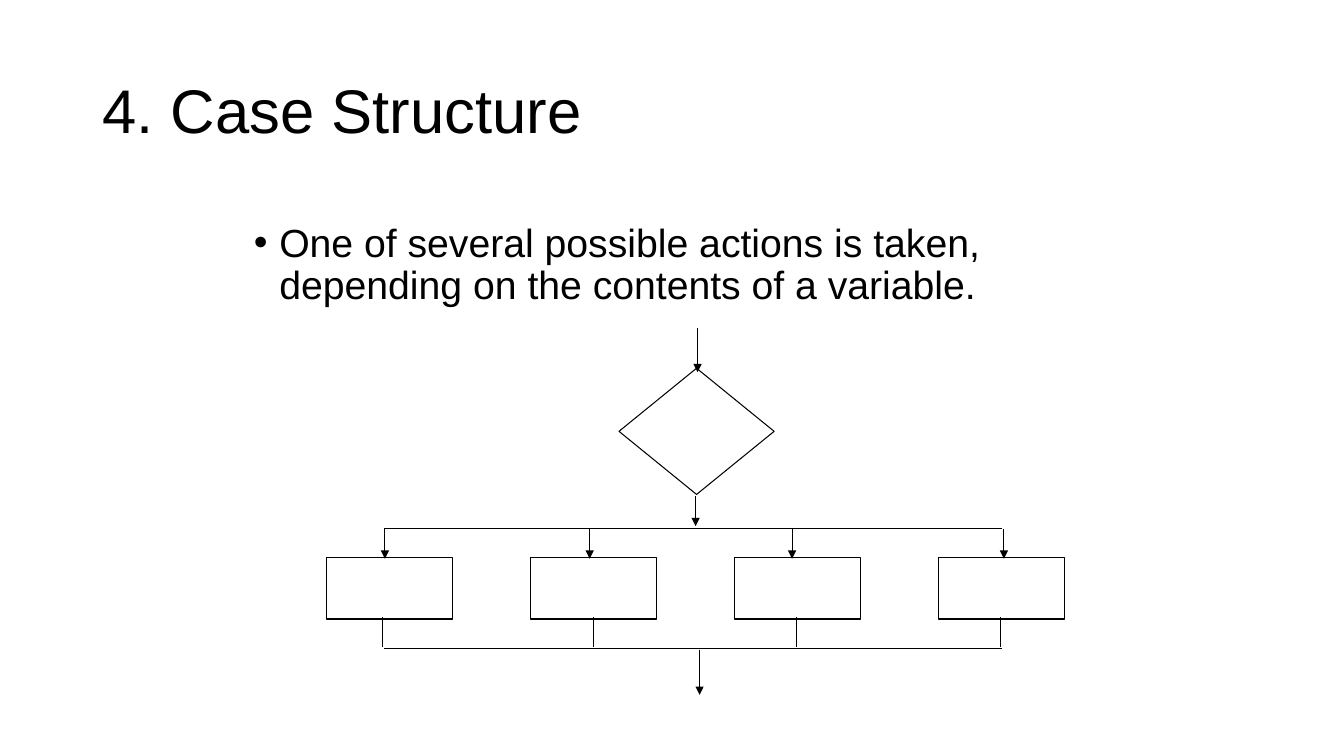
from dataclasses import dataclass

from lxml import etree
from pptx import Presentation
from pptx.dml.color import RGBColor
from pptx.enum.shapes import MSO_CONNECTOR, MSO_SHAPE
from pptx.enum.text import MSO_ANCHOR, MSO_AUTO_SIZE, PP_ALIGN
from pptx.oxml.ns import qn
from pptx.util import Cm, Pt

RECTANGLE = MSO_SHAPE.RECTANGLE
DECISION = MSO_SHAPE.FLOWCHART_DECISION
STRAIGHT = MSO_CONNECTOR.STRAIGHT
MIDDLE, TOP = MSO_ANCHOR.MIDDLE, MSO_ANCHOR.TOP
LEFT = PP_ALIGN.LEFT
NO_AUTOFIT = MSO_AUTO_SIZE.NONE
TITLE_ONLY = 5


@dataclass(frozen=True)
class Theme:
    ink: RGBColor = RGBColor(0, 0, 0)
    font: str = "Arial"
    title_size: float = 44
    body_size: float = 28
    line_width: float = 0.75
    line_spacing: float = 0.9


THEME = Theme()


def place(shape, box):
    """Move a shape to a (left, top, width, height) box in centimetres."""
    shape.left, shape.top, shape.width, shape.height = map(Cm, box)


def write_text(shape, text, size, anchor):
    """Fill the first paragraph of a shape and return it."""
    frame = shape.text_frame
    frame.word_wrap = True
    frame.auto_size = NO_AUTOFIT
    frame.vertical_anchor = anchor
    paragraph = frame.paragraphs[0]
    paragraph.alignment = LEFT
    paragraph.line_spacing = THEME.line_spacing
    run = paragraph.add_run()
    run.text = text
    run.font.name = THEME.font
    run.font.size = Pt(size)
    run.font.color.rgb = THEME.ink
    return paragraph


def add_title(slide, box, text):
    title = slide.shapes.title
    place(title, box)
    write_text(title, text, THEME.title_size, MIDDLE)


def add_bullet_text(slide, box, text):
    body = slide.shapes.add_textbox(*map(Cm, box))
    paragraph = write_text(body, text, THEME.body_size, TOP)
    paragraph.space_before = Pt(10)
    indent = Cm(0.64)
    properties = paragraph._p.get_or_add_pPr()
    properties.set("marL", str(indent))
    properties.set("indent", str(-indent))
    etree.SubElement(properties, qn("a:buFont")).set("typeface", THEME.font)
    etree.SubElement(properties, qn("a:buChar")).set("char", "•")


def style_line(line):
    line.color.rgb = THEME.ink
    line.width = Pt(THEME.line_width)


def add_outline(slide, kind, box):
    shape = slide.shapes.add_shape(kind, *map(Cm, box))
    shape.shadow.inherit = False
    shape.fill.background()
    style_line(shape.line)


def add_line(slide, start, end, arrow=False):
    connector = slide.shapes.add_connector(STRAIGHT, *map(Cm, start + end))
    style_line(connector.line)
    if arrow:
        line = connector.line._get_or_add_ln()
        etree.SubElement(line, qn("a:tailEnd")).set("type", "triangle")
    etree.SubElement(connector._element.spPr, qn("a:effectLst"))


def add_case_flowchart(slide, box):
    """Draw a decision that fans out to four actions and joins again."""
    left, top, width, height = box
    action_width, action_height = 3.18, 1.55
    drops = (1.47, 6.63, 11.73, 17.07)
    risers = (1.4, 6.73, 11.84, 16.99)
    pitch = (width - action_width) / (len(drops) - 1)
    split, join = top + 5.05, top + 8.08
    bar_left, bar_right = left + 1.45, left + 17.02

    def add_vertical(x, start, end, arrow=False):
        add_line(slide, (left + x, start), (left + x, end), arrow)

    add_outline(slide, DECISION, (left + 7.37, top + 1.02, 3.91, 3.18))
    add_vertical(9.35, top, top + 1.12, arrow=True)
    add_vertical(9.3, top + 4.24, split - 0.05, arrow=True)
    for bar in (split, join):
        add_line(slide, (bar_left, bar), (bar_right, bar))
    for index, (drop, riser) in enumerate(zip(drops, risers)):
        add_outline(slide, RECTANGLE, (left + index * pitch, top + 5.79,
                                       action_width, action_height))
        add_vertical(drop, split + 0.03, top + 5.82, arrow=True)
        add_vertical(riser, top + 7.29, join - 0.03)
    add_vertical(9.4, join + 0.03, top + height, arrow=True)


def main():
    presentation = Presentation()
    presentation.slide_width = Cm(33.87)
    presentation.slide_height = Cm(19.05)
    slide = presentation.slides.add_slide(
        presentation.slide_layouts[TITLE_ONLY])
    add_title(slide, (2.33, 1.01, 29.21, 3.68), "4. Case Structure")
    add_bullet_text(
        slide, (6.15, 5.51, 22.25, 2.6),
        "One of several possible actions is taken, "
        "depending on the contents of a variable.")
    add_case_flowchart(slide, (8.23, 8.26, 18.59, 9.25))
    presentation.save("out.pptx")


if __name__ == "__main__":
    main()
